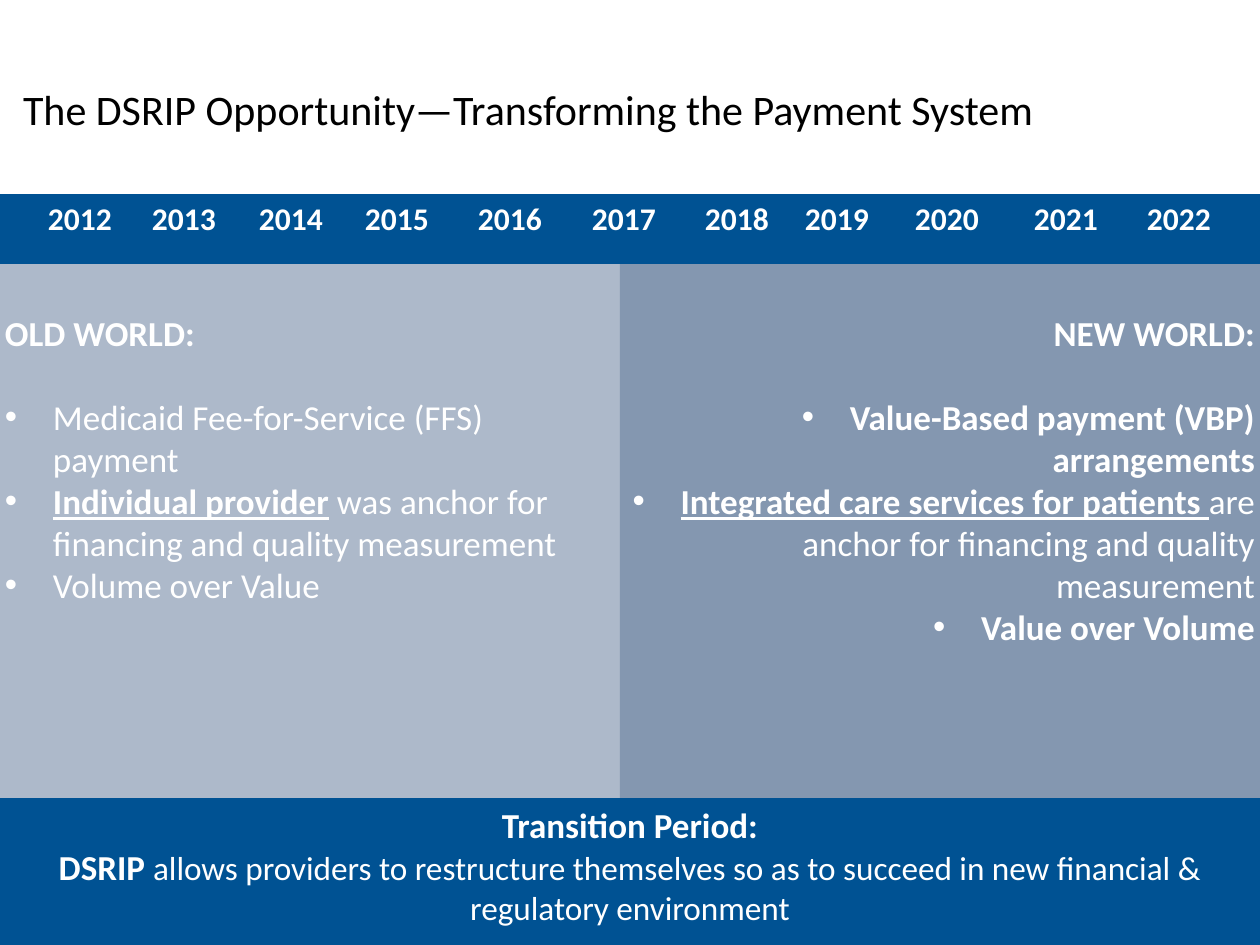
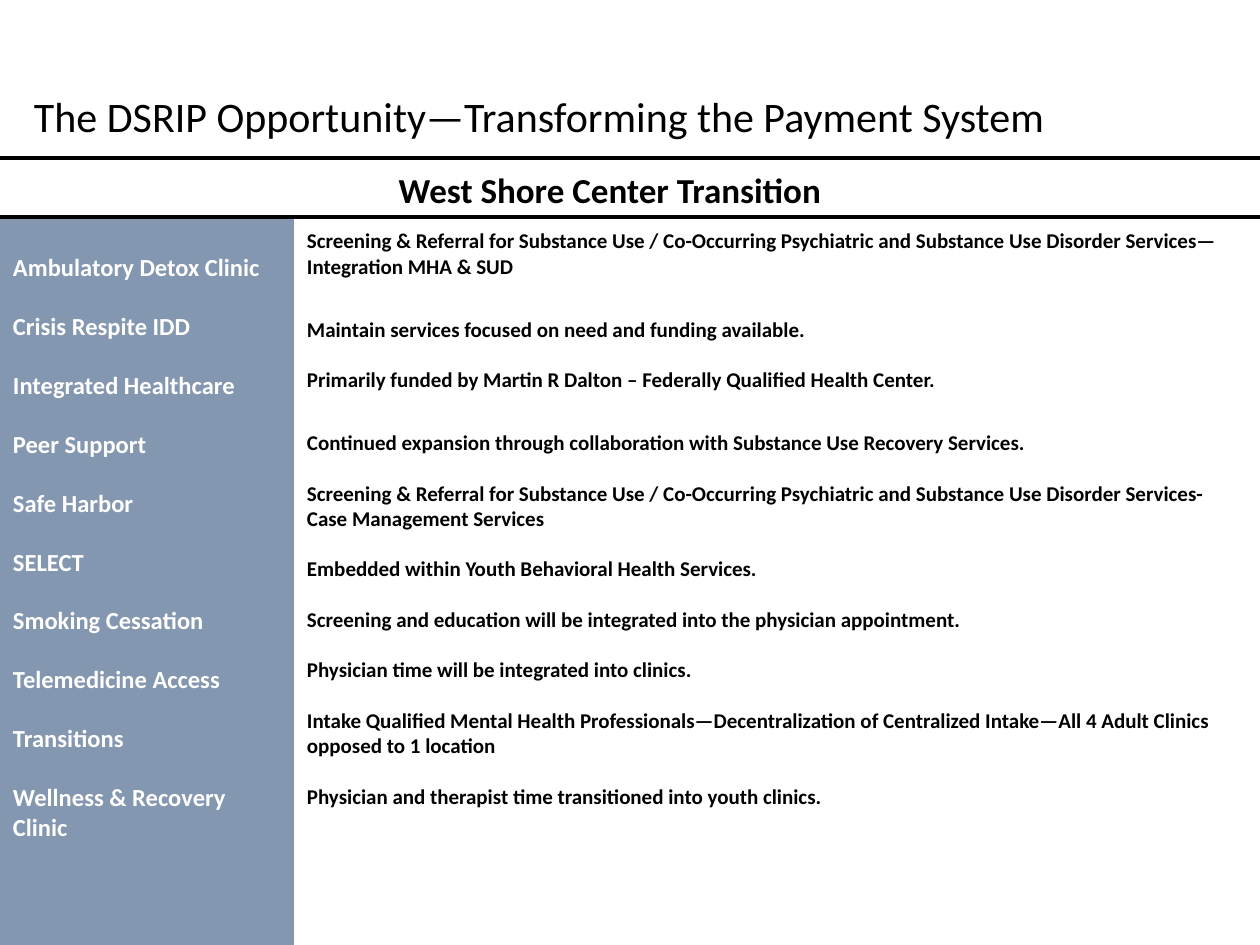
from dataclasses import dataclass

from lxml.etree import SubElement
from pptx import Presentation
from pptx.dml.color import RGBColor
from pptx.enum.shapes import MSO_CONNECTOR, MSO_SHAPE
from pptx.enum.text import MSO_ANCHOR, PP_ALIGN
from pptx.oxml.ns import qn
from pptx.util import Emu, Pt

EMU_PER_PX = 914400 / 126
WIDTH, HEIGHT = 1260, 945


def px(length):
    return Emu(round(length * EMU_PER_PX))


@dataclass(frozen=True)
class Theme:
    font: str = "Calibri"
    ink: str = "000000"
    paper: str = "FFFFFF"
    band: str = "005293"
    old: str = "ADB9CA"
    new: str = "8497B0"
    title: int = 24
    heading: int = 20
    closing: int = 19
    years: int = 18
    program: int = 14
    detail: int = 12


@dataclass
class Para:
    runs: list
    spacing: float = 1
    before: float = 0
    bullet: bool = False
    tabs: tuple = ()


class Deck:
    def __init__(self, theme):
        self.theme = theme
        self.show = Presentation()
        self.show.slide_width, self.show.slide_height = px(WIDTH), px(HEIGHT)
        self.slide = None

    def new_slide(self):
        self.slide = self.show.slides.add_slide(self.show.slide_layouts[6])

    def title(self, text, left, top):
        self.text(left, top, 1218, 58, [Para([(text, "", self.theme.title)])], self.theme.ink)

    def panel(self, left, top, width, height, fill, paras, inset=(5, 5), align=PP_ALIGN.LEFT):
        panel = self.slide.shapes.add_shape(
            MSO_SHAPE.RECTANGLE, px(left), px(top), px(width), px(height))
        panel.shadow.inherit = False
        panel.fill.solid()
        panel.fill.fore_color.rgb = RGBColor.from_string(fill)
        panel.line.fill.background()
        self.fill_text(panel.text_frame, paras, self.theme.paper, inset, align)

    def text(self, left, top, width, height, paras, color, inset=(13, 6), align=PP_ALIGN.LEFT):
        box = self.slide.shapes.add_textbox(px(left), px(top), px(width), px(height))
        self.fill_text(box.text_frame, paras, color, inset, align)

    def rule(self, y):
        rule = self.slide.shapes.add_connector(
            MSO_CONNECTOR.STRAIGHT, 0, px(y), px(WIDTH), px(y))
        rule.line.color.rgb = RGBColor.from_string(self.theme.ink)
        rule.line.width = Pt(2.25)
        SubElement(rule._element.spPr, qn("a:effectLst"))

    def fill_text(self, frame, paras, color, inset, align):
        side, top = inset
        frame.word_wrap = True
        frame.vertical_anchor = MSO_ANCHOR.TOP
        frame.margin_left = frame.margin_right = px(side)
        frame.margin_top, frame.margin_bottom = px(top), px(5)
        for index, para in enumerate(paras):
            line = frame.paragraphs[0] if index == 0 else frame.add_paragraph()
            line.alignment = align
            line.line_spacing = para.spacing
            line.space_before = Pt(para.before)
            if para.bullet:
                self.bullet(line)
            if para.tabs:
                self.tab_stops(line, [stop - side for stop in para.tabs])
            for words, style, size in para.runs:
                run = line.add_run()
                run.text = words
                run.font.name = self.theme.font
                run.font.size = Pt(size)
                run.font.bold = "b" in style
                run.font.underline = "u" in style
                run.font.color.rgb = RGBColor.from_string(color)

    def bullet(self, line):
        props = line._p.get_or_add_pPr()
        props.set("marL", str(px(48)))
        props.set("indent", str(px(-48)))
        SubElement(props, qn("a:buFont"), typeface="Arial")
        SubElement(props, qn("a:buChar"), char="•")

    def tab_stops(self, line, stops):
        tabs = SubElement(line._p.get_or_add_pPr(), qn("a:tabLst"))
        for stop in stops:
            SubElement(tabs, qn("a:tab"), pos=str(px(stop)), algn="l")


TITLE = "The DSRIP Opportunity—Transforming the Payment System"
YEAR_LEFTS = (48, 152, 259, 365, 478, 592, 705, 805, 915, 1034, 1147)
OLD_WORLD = [
    [("Medicaid Fee-for-Service (FFS) payment", "")],
    [("Individual provider", "bu"), (" was anchor for financing and quality measurement", "")],
    [("Volume over Value", "")],
]
NEW_WORLD = [
    [("Value-Based payment (VBP) arrangements", "b")],
    [("Integrated care services for patients ", "bu"),
     ("are anchor for financing and quality measurement", "")],
    [("Value over Volume", "b")],
]
PROGRAMS = [
    "Ambulatory Detox Clinic", "Crisis Respite IDD", "Integrated Healthcare", "Peer Support",
    "Safe Harbor", "SELECT", "Smoking Cessation", "Telemedicine Access", "Transitions",
]
TRANSITIONS = [
    ("Screening & Referral for Substance Use / Co-Occurring Psychiatric and Substance Use "
     "Disorder Services—Integration MHA & SUD", 1, 0),
    ("Maintain services focused on need and funding available.", 2.5, 0),
    ("Primarily funded by Martin R Dalton – Federally Qualified Health Center.", 2, 0),
    ("Continued expansion through collaboration with Substance Use Recovery Services.", 2.5, 0),
    ("Screening & Referral for Substance Use / Co-Occurring Psychiatric and Substance Use "
     "Disorder Services- Case Management Services", 1, 14.6),
    ("Embedded within Youth Behavioral Health Services.", 2, 0),
    ("Screening and education will be integrated into the physician appointment.", 2, 0),
    ("Physician time will be integrated into clinics.", 2, 0),
    ("Intake Qualified Mental Health Professionals—Decentralization of Centralized Intake—"
     "All 4 Adult Clinics opposed to 1 location", 1, 14.6),
    ("Physician and therapist time transitioned into youth clinics.", 2, 0),
]


def world(heading, points, size):
    paras = [Para([(heading, "b", size)])]
    for index, point in enumerate(points):
        runs = [(words, style, size) for words, style in point]
        paras.append(Para(runs, before=24.4 if index == 0 else 0, bullet=True))
    return paras


def payment_slide(deck):
    theme = deck.theme
    deck.new_slide()
    deck.title(TITLE, 10, 77)
    years = [(f"\t{2012 + index}", "b", theme.years) for index in range(len(YEAR_LEFTS))]
    deck.panel(0, 194, WIDTH, 70, theme.band, [Para(years, tabs=YEAR_LEFTS)])
    deck.panel(0, 264, 620, 534, theme.old,
               world("OLD WORLD:", OLD_WORLD, theme.heading), (5, 47))
    deck.panel(620, 264, 640, 534, theme.new,
               world("NEW WORLD:", NEW_WORLD, theme.heading), (5, 47), PP_ALIGN.RIGHT)
    deck.panel(0, 798, WIDTH, 147, theme.band, [
        Para([("Transition Period:", "b", theme.heading)]),
        Para([("DSRIP ", "b", theme.heading),
              ("allows providers to restructure themselves so as to succeed in new financial "
               "& regulatory environment", "", theme.closing)]),
    ], align=PP_ALIGN.CENTER)


def center_slide(deck):
    theme = deck.theme
    deck.new_slide()
    programs = [Para([(name, "b", theme.program)], spacing=2) for name in PROGRAMS]
    programs.append(Para([("Wellness & Recovery Clinic", "b", theme.program)], before=17))
    deck.panel(0, 217, 294, 728, theme.new, programs, (13, 6))
    deck.title(TITLE, 21, 84)
    deck.rule(158)
    deck.rule(217)
    deck.text(0, 163, 1220, 42, [Para([("West Shore Center Transition", "b", theme.heading)])],
              theme.ink, (5, 5), PP_ALIGN.CENTER)
    details = [Para([(words, "b", theme.detail)], spacing, before)
               for words, spacing, before in TRANSITIONS]
    deck.text(294, 222, 945, 598, details, theme.ink)


def main():
    deck = Deck(Theme())
    payment_slide(deck)
    center_slide(deck)
    deck.show.save("out.pptx")


if __name__ == "__main__":
    main()
